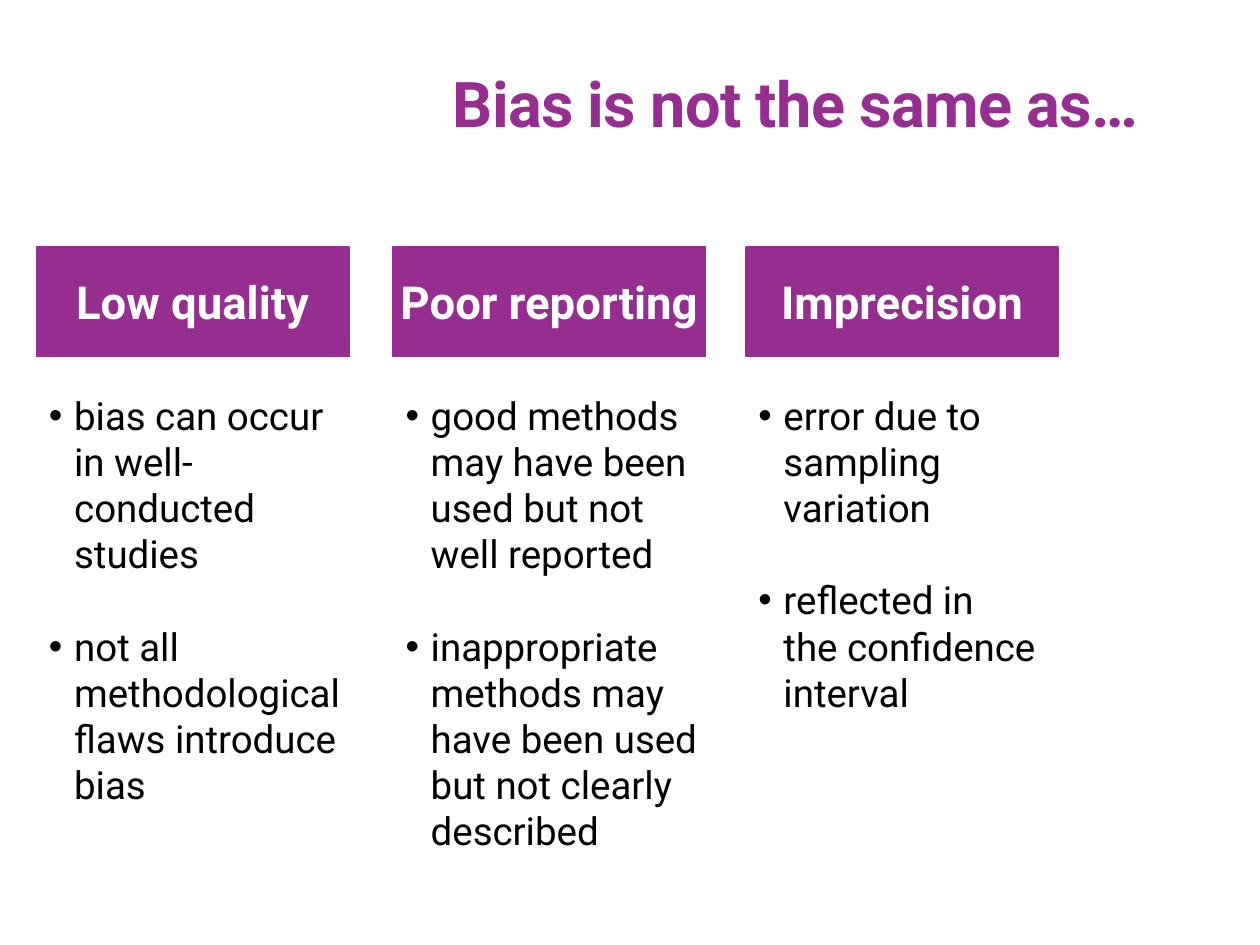
"""Build a slide contrasting bias with three concepts it is often confused with."""
from dataclasses import dataclass

import pptx
import pptx.dml.color
import pptx.enum.shapes
import pptx.enum.text
import pptx.oxml
import pptx.oxml.ns
import pptx.util
from pptx.util import Inches

RGB = pptx.dml.color.RGBColor
ALIGN = pptx.enum.text.PP_ALIGN
ANCHOR = pptx.enum.text.MSO_ANCHOR


@dataclass(frozen=True)
class Theme:
    font: str = "Roboto"
    purple: RGB = RGB(0x96, 0x2D, 0x91)
    white: RGB = RGB(0xFF, 0xFF, 0xFF)
    black: RGB = RGB(0, 0, 0)
    title_size: float = 36
    heading_size: float = 26
    body_size: float = 22
    bullet_gap: float = 26.4


@dataclass(frozen=True)
class Column:
    heading: str
    points: tuple[str, ...]
    left: float
    body_width: float
    body_height: float


THEME = Theme()
HEADING_TOP, HEADING_WIDTH, HEADING_HEIGHT = 1.96, 2.48, 0.87
BODY_TOP, BULLET_INDENT = 3.06, 0.2
COLUMNS = (
    Column(
        "Low quality",
        ("bias can occur in well-conducted studies",
         "not all methodological flaws introduce bias"),
        0.29, 2.62, 2.81,
    ),
    Column(
        "Poor reporting",
        ("good methods may have been used but not well reported",
         "inappropriate methods may have been used but not clearly described"),
        3.12, 2.59, 3.65,
    ),
    Column(
        "Imprecision",
        ("error due to sampling variation",
         "reflected in\vthe confidence interval"),
        5.92, 2.44, 3.11,
    ),
)


def style(para, size: float, color: RGB, bold: bool = False) -> None:
    para.font.name = THEME.font
    para.font.size = pptx.util.Pt(size)
    para.font.color.rgb = color
    para.font.bold = bold


def add_bullet(para) -> None:
    properties = para._p.get_or_add_pPr()
    indent = Inches(BULLET_INDENT)
    properties.set("marL", str(indent))
    properties.set("indent", str(-indent))
    namespace = pptx.oxml.ns.nsdecls("a")
    properties.append(pptx.oxml.parse_xml(f'<a:buFont {namespace} typeface="Arial"/>'))
    properties.append(pptx.oxml.parse_xml(f'<a:buChar {namespace} char="•"/>'))


def draw_title(page, text: str) -> None:
    title = page.shapes.title
    title.left, title.top = Inches(2.64), Inches(0.21)
    title.width, title.height = Inches(6.49), Inches(1.2)
    title.text_frame.vertical_anchor = ANCHOR.MIDDLE
    para = title.text_frame.paragraphs[0]
    para.alignment = ALIGN.RIGHT
    span = para.add_run()
    span.text = text
    span._r.get_or_add_rPr().set("spc", "-40")
    style(para, THEME.title_size, THEME.purple, bold=True)


def draw_heading(page, column: Column) -> None:
    box = page.shapes.add_shape(
        pptx.enum.shapes.MSO_SHAPE.RECTANGLE, Inches(column.left),
        Inches(HEADING_TOP), Inches(HEADING_WIDTH), Inches(HEADING_HEIGHT),
    )
    box.shadow.inherit = False
    box.fill.solid()
    box.fill.fore_color.rgb = THEME.purple
    box.line.color.rgb = THEME.purple
    box.line.width = pptx.util.Pt(1)
    frame = box.text_frame
    frame.word_wrap = False
    frame.vertical_anchor = ANCHOR.MIDDLE
    para = frame.paragraphs[0]
    para.text = column.heading
    para.alignment = ALIGN.CENTER
    style(para, THEME.heading_size, THEME.white, bold=True)


def draw_points(page, column: Column) -> None:
    box = page.shapes.add_textbox(
        Inches(column.left), Inches(BODY_TOP),
        Inches(column.body_width), Inches(column.body_height),
    )
    frame = box.text_frame
    frame.word_wrap = True
    for index, point in enumerate(column.points):
        para = frame.add_paragraph() if index else frame.paragraphs[0]
        para.text = point
        add_bullet(para)
        if index:
            para.space_before = pptx.util.Pt(THEME.bullet_gap)
        style(para, THEME.body_size, THEME.black)


def main() -> None:
    deck = pptx.Presentation()
    deck.slide_width, deck.slide_height = Inches(10), Inches(7.5)
    page = deck.slides.add_slide(deck.slide_layouts.get_by_name("Title Only"))
    draw_title(page, "Bias is not the same as…")
    for column in COLUMNS:
        draw_heading(page, column)
        draw_points(page, column)
    deck.save("out.pptx")


if __name__ == "__main__":
    main()
